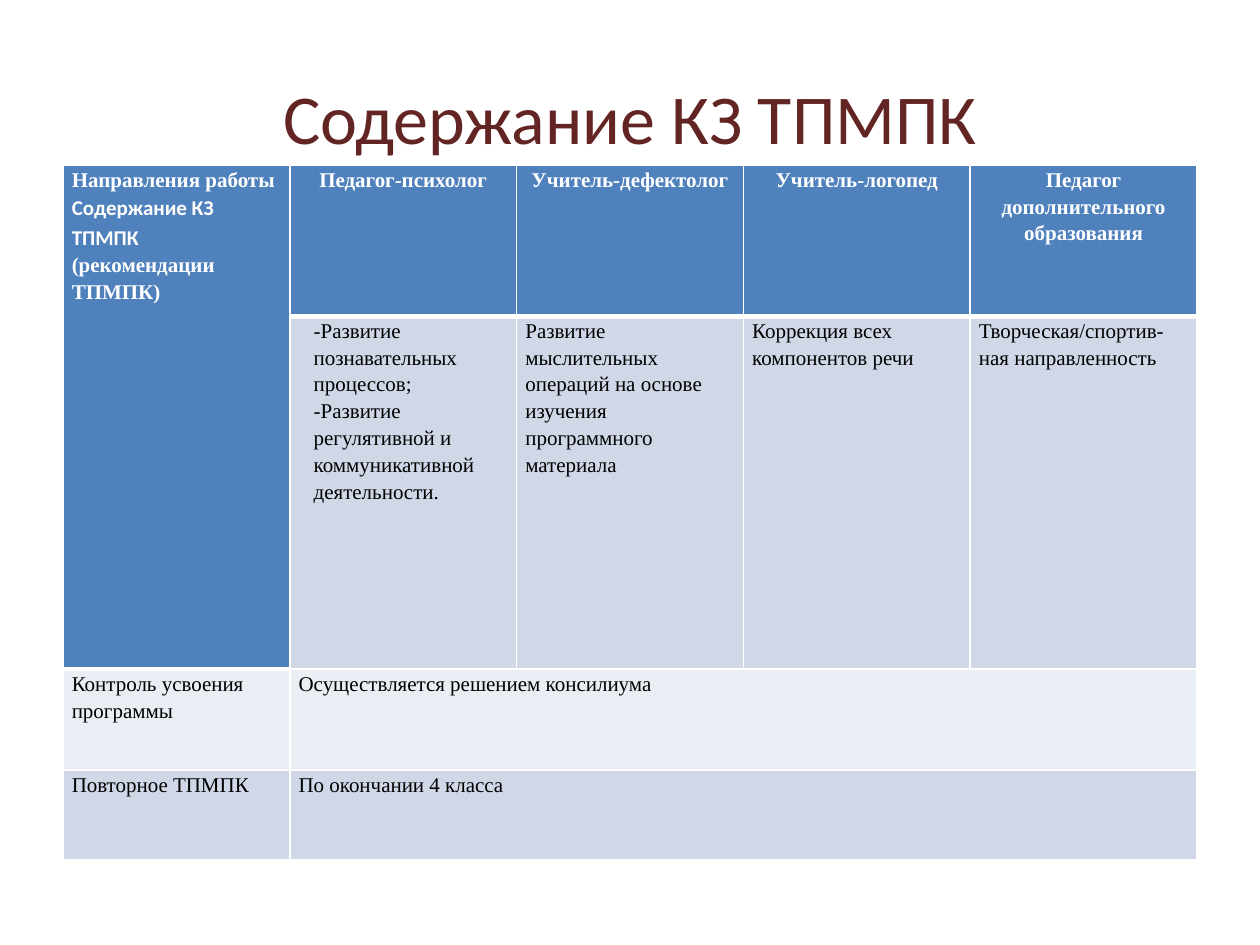
from dataclasses import dataclass

from lxml.etree import SubElement
from pptx import Presentation
from pptx.dml.color import RGBColor
from pptx.enum.text import MSO_ANCHOR, PP_ALIGN
from pptx.oxml.ns import qn
from pptx.util import Inches, Pt


@dataclass(frozen=True)
class Theme:
    title_color: str = "632523"
    header_fill: str = "4F81BD"
    dark_band: str = "D0D8E8"
    light_band: str = "E9EDF4"
    white: str = "FFFFFF"
    black: str = "000000"
    title_font: str = "Calibri"
    body_font: str = "Times New Roman"
    title_size: int = 40
    body_size: int = 12
    line_spacing: float = 1.15
    thin: int = 1
    thick: int = 3


THEME = Theme()
COLUMN_WIDTH = 1.8
ROW_HEIGHTS = (1.2, 2.8, 0.8, 0.71)
ROW_FILLS = (THEME.header_fill, THEME.dark_band, THEME.light_band, THEME.dark_band)

SPECIALISTS = ("Педагог-психолог", "Учитель-дефектолог", "Учитель-логопед",
               "Педагог дополнительного образования")
DIRECTIONS = (
    ("-Развитие познавательных процессов;",
     "-Развитие регулятивной и коммуникативной деятельности."),
    ("Развитие мыслительных операций на основе изучения программного материала",),
    ("Коррекция всех компонентов речи",),
    ("Творческая/спортив-ная направленность",),
)
DECISIONS = (
    ("Контроль усвоения программы", "Осуществляется решением консилиума"),
    ("Повторное ТПМПК", "По окончании 4 класса"),
)


def add_span(para, text, size, color, font, bold=False):
    span = para.add_run()
    span.text = text
    span.font.size = Pt(size)
    span.font.name = font
    span.font.bold = bold
    span.font.color.rgb = RGBColor.from_string(color)


def add_title(page, text):
    box = page.shapes.add_textbox(Inches(0.5), Inches(0.3), Inches(9), Inches(1.25))
    frame = box.text_frame
    frame.word_wrap = True
    frame.vertical_anchor = MSO_ANCHOR.MIDDLE
    para = frame.paragraphs[0]
    para.alignment = PP_ALIGN.CENTER
    add_span(para, text, THEME.title_size, THEME.title_color, THEME.title_font)


def set_borders(cell, widths):
    """Put white lines, given as (side, points) in L, R, T, B order, before the fill."""
    properties = cell._tc.get_or_add_tcPr()
    for place, (side, width) in enumerate(widths):
        line = SubElement(properties, qn(f"a:ln{side}"), w=str(Pt(width)))
        fill = SubElement(line, qn("a:solidFill"))
        SubElement(fill, qn("a:srgbClr"), val=THEME.white)
        properties.insert(place, line)


def style_cell(cell, row, column):
    is_header = row == 0 or (row == 1 and column == 0)
    cell.margin_left = cell.margin_right = Inches(0.07)
    cell.margin_top = cell.margin_bottom = 0
    cell.fill.solid()
    cell.fill.fore_color.rgb = RGBColor.from_string(
        THEME.header_fill if is_header else ROW_FILLS[row])
    widths = [("L", THEME.thin), ("R", THEME.thin)]
    if row == 0:
        widths.append(("T", THEME.thin))
    widths.append(("B", THEME.thick if is_header else THEME.thin))
    set_borders(cell, widths)


def write_cell(cell, paragraphs, header=False, align=PP_ALIGN.LEFT, left=0, first=0):
    """Each paragraph is a list of (text, font) pairs."""
    frame = cell.text_frame
    for number, spans in enumerate(paragraphs):
        para = frame.add_paragraph() if number else frame.paragraphs[0]
        para.alignment = align
        para.line_spacing = THEME.line_spacing
        properties = para._p.get_or_add_pPr()
        properties.set("marL", str(Inches(left)))
        properties.set("indent", str(Inches(first)))
        for text, font in spans:
            add_span(para, text, THEME.body_size,
                     THEME.white if header else THEME.black, font, header)


def plain(*texts):
    return [[(text, THEME.body_font)] for text in texts]


def add_grid(page):
    columns = len(SPECIALISTS) + 1
    table = page.shapes.add_table(
        len(ROW_HEIGHTS), columns, Inches(0.5), Inches(1.31),
        Inches(COLUMN_WIDTH * columns), Inches(sum(ROW_HEIGHTS))).table
    table.horz_banding = False
    for column in table.columns:
        column.width = Inches(COLUMN_WIDTH)
    for row, height in zip(table.rows, ROW_HEIGHTS):
        row.height = Inches(height)
    for row in range(len(ROW_HEIGHTS)):
        for column in range(columns):
            style_cell(table.cell(row, column), row, column)
    return table


def fill_grid(table):
    # Header column over two rows
    table.cell(0, 0).merge(table.cell(1, 0))
    write_cell(table.cell(0, 0), [[
        ("Направления работы ", THEME.body_font),
        ("Содержание КЗ ТПМПК ", THEME.title_font),
        ("(рекомендации ТПМПК)", THEME.body_font)]], header=True)

    # Specialists and their directions of work
    for column, (name, work) in enumerate(zip(SPECIALISTS, DIRECTIONS), start=1):
        write_cell(table.cell(0, column), plain(name), header=True, align=PP_ALIGN.CENTER)
        write_cell(table.cell(1, column), plain(*work), left=0.12 if column == 1 else 0)

    # Decisions across all specialists
    for row, (label, decision) in enumerate(DECISIONS, start=2):
        table.cell(row, 1).merge(table.cell(row, len(SPECIALISTS)))
        write_cell(table.cell(row, 0), plain(label))
        write_cell(table.cell(row, 1), plain(decision), left=0.22, first=-0.22)


def main():
    deck = Presentation()
    deck.slide_width, deck.slide_height = Inches(10), Inches(7.5)
    page = deck.slides.add_slide(deck.slide_layouts[6])
    add_title(page, "Содержание КЗ ТПМПК")
    fill_grid(add_grid(page))
    deck.save("out.pptx")


if __name__ == "__main__":
    main()
